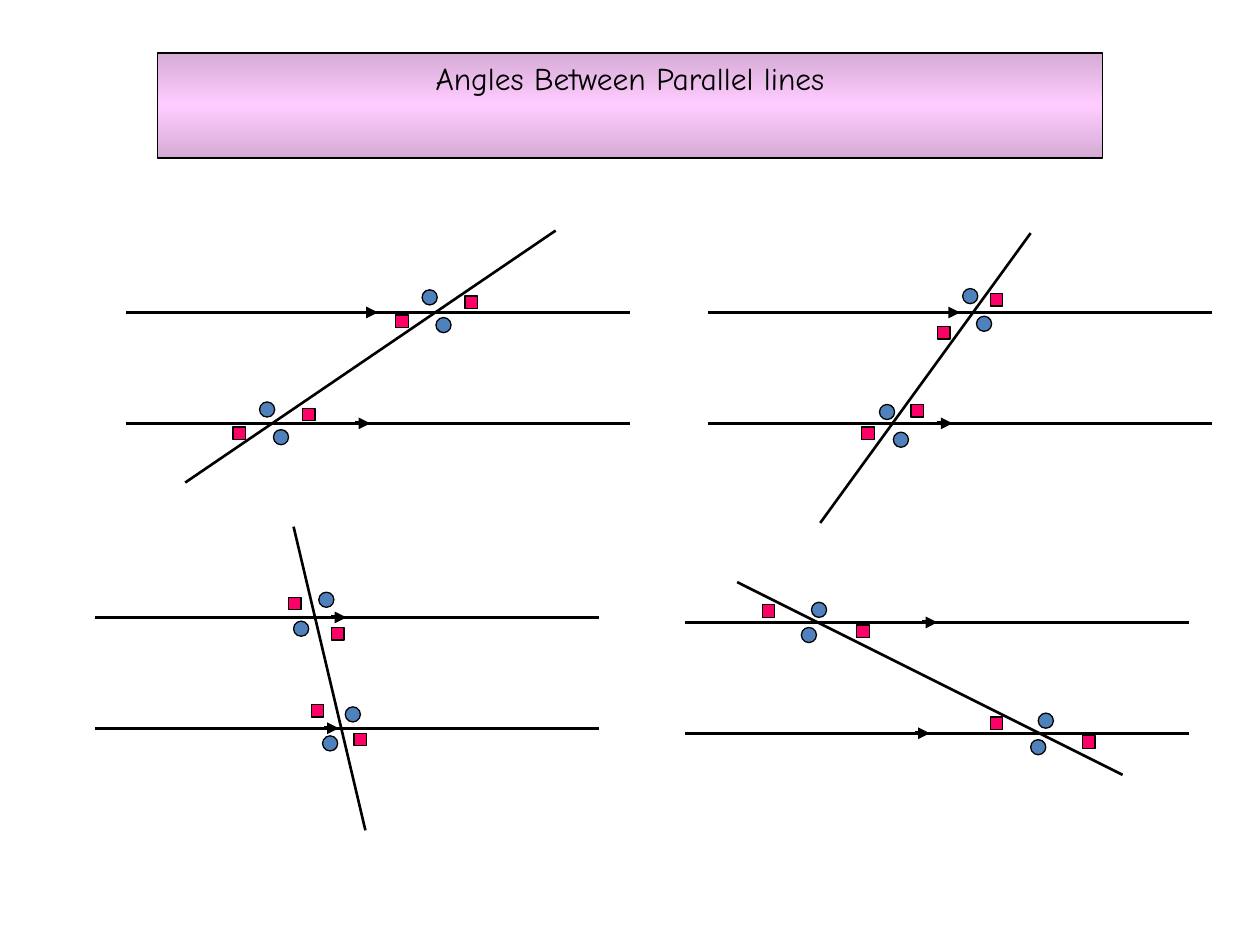
from pptx import Presentation
from pptx.dml.color import RGBColor
from pptx.enum import shapes, text
from pptx.oxml.ns import qn
from pptx.util import Inches, Pt
from lxml import etree

TITLE = "Angles Between Parallel lines"
BLACK, BLUE, PINK = "000000", "4F81BD", "FF0066"
LINE_LENGTH, LINE_GAP, ARROW_LENGTH = 4, 0.88, 0.12
ARROW_STARTS = (1.88, 1.82)
CIRCLE_SIZE, SQUARE_SIZE = 0.12, 0.1

DIAGRAMS = [
    {"corner": (1, 2.48), "transversal": (1.47, 3.83, 4.41, 1.83),
     "circles": [(3.35, 2.3), (3.46, 2.52), (2.06, 3.19), (2.17, 3.41)],
     "squares": [(3.69, 2.35), (3.14, 2.5), (2.4, 3.24), (1.85, 3.39)]},
    {"corner": (5.62, 2.48), "transversal": (6.51, 4.15, 8.18, 1.85),
     "circles": [(7.64, 2.29), (7.75, 2.51), (6.98, 3.21), (7.09, 3.43)],
     "squares": [(7.86, 2.33), (7.44, 2.59), (7.23, 3.21), (6.84, 3.39)]},
    {"corner": (0.75, 4.9), "transversal": (2.9, 6.59, 2.33, 4.18),
     "circles": [(2.53, 4.7), (2.33, 4.93), (2.74, 5.61), (2.56, 5.84)],
     "squares": [(2.29, 4.74), (2.63, 4.98), (2.47, 5.59), (2.81, 5.82)]},
    {"corner": (5.44, 4.94), "transversal": (8.91, 6.15, 5.85, 4.62),
     "circles": [(6.44, 4.78), (6.36, 4.98), (8.24, 5.66), (8.18, 5.87)],
     "squares": [(6.05, 4.8), (6.8, 4.96), (7.86, 5.69), (8.59, 5.84)]},
]


def color(hex_string):
    return RGBColor.from_string(hex_string)


def set_line(shape, width):
    shape.line.color.rgb = color(BLACK)
    shape.line.width = Pt(width)


def write(box, words, size, font, fill, align):
    para = box.text_frame.paragraphs[0]
    para.alignment = align
    spacing = etree.SubElement(para._p.get_or_add_pPr(), qn("a:spcBef"))
    etree.SubElement(spacing, qn("a:spcPct"), val="50000")
    span = para.add_run()
    span.text = words
    span.font.size = Pt(size)
    span.font.name = font
    span.font.color.rgb = color(fill)


def add_title(page):
    box = page.shapes.title
    box.left, box.top = Inches(1.25), Inches(0.42)
    box.width, box.height = Inches(7.5), Inches(0.51)
    box.fill.gradient()
    box.fill.gradient_angle = 90
    gradient_stops = box.fill._xPr.find(qn("a:gradFill")).find(qn("a:gsLst"))
    for stop in list(gradient_stops):
        gradient_stops.remove(stop)
    for position, shade in ((0, "D5ABD5"), (50, "FFCCFF"), (100, "D5ABD5")):
        stop = etree.SubElement(gradient_stops, qn("a:gs"), pos=str(position * 1000))
        etree.SubElement(stop, qn("a:srgbClr"), val=shade)
    set_line(box, 0.75)
    frame = box.text_frame
    frame.word_wrap = True
    frame.auto_size = text.MSO_AUTO_SIZE.SHAPE_TO_FIT_TEXT
    frame.vertical_anchor = text.MSO_ANCHOR.TOP
    write(box, TITLE, size=18, font="Comic Neue", fill=BLACK, align=text.PP_ALIGN.CENTER)


def add_line(group, ends, width=1.5, arrow=False):
    line = group.shapes.add_connector(
        shapes.MSO_CONNECTOR.STRAIGHT, *(Inches(value) for value in ends))
    set_line(line, width)
    if arrow:
        etree.SubElement(line.line._get_or_add_ln(), qn("a:tailEnd"), type="triangle")
    etree.SubElement(line._element.spPr, qn("a:effectLst"))


def add_marks(group, kind, places, size, fill):
    for left, top in places:
        mark = group.shapes.add_shape(
            kind, Inches(left), Inches(top), Inches(size), Inches(size))
        mark.shadow.inherit = False
        mark.fill.solid()
        mark.fill.fore_color.rgb = color(fill)
        set_line(mark, 0.75)


def add_diagram(page, diagram):
    group = page.shapes.add_group_shape()
    left, top = diagram["corner"]
    for row, arrow_start in enumerate(ARROW_STARTS):
        y = top + row * LINE_GAP
        start = left + arrow_start
        add_line(group, (left, y, left + LINE_LENGTH, y))
        add_line(group, (start, y, start + ARROW_LENGTH, y), width=2.25, arrow=True)
    add_line(group, diagram["transversal"])
    add_marks(group, shapes.MSO_SHAPE.OVAL, diagram["circles"], CIRCLE_SIZE, BLUE)
    add_marks(group, shapes.MSO_SHAPE.RECTANGLE, diagram["squares"], SQUARE_SIZE, PINK)


def main():
    deck = Presentation()
    deck.slide_width, deck.slide_height = Inches(10), Inches(7.5)
    page = deck.slides.add_slide(deck.slide_layouts[5])
    add_title(page)
    for diagram in DIAGRAMS:
        add_diagram(page, diagram)
    deck.save("out.pptx")


if __name__ == "__main__":
    main()
